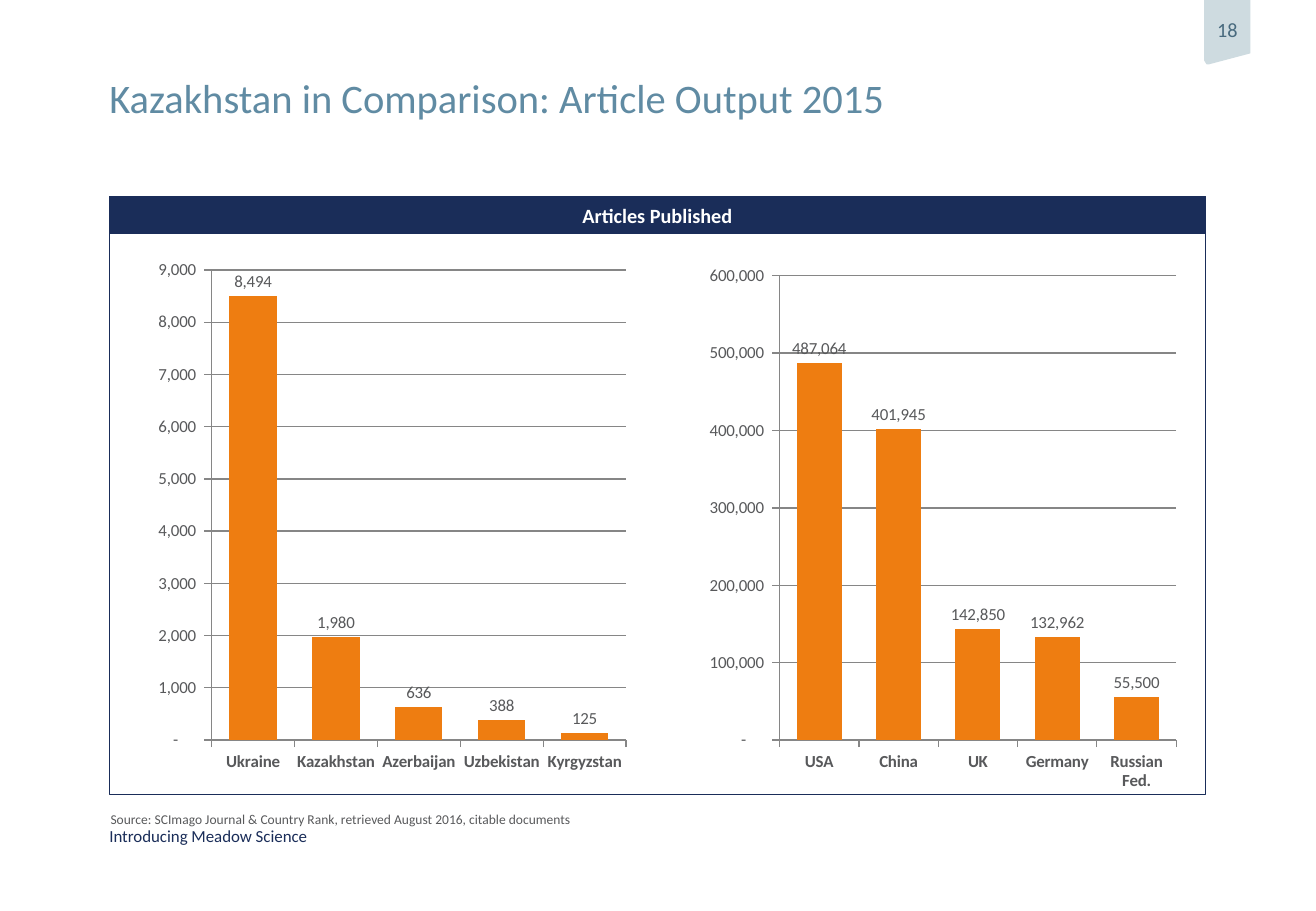
import pptx
import pptx.util
import pptx.chart.data
import pptx.dml.color
import pptx.enum.chart
import pptx.enum.shapes
import pptx.enum.text
import pptx.oxml
from pptx.util import Inches

FONT = "Calibri"
NAVY, TEAL, SLATE = "1A2D59", "608BA3", "486A7E"
PALE, ORANGE, GREY, WHITE = "CEDBE0", "EE7D11", "58595B", "FFFFFF"
AXIS_GREY = "868686"
ACCOUNTING = '_(* #,##0_);_(* \\(#,##0\\);_(* "-"??_);_('
ALIGN = pptx.enum.text.PP_ALIGN
ANCHOR = pptx.enum.text.MSO_ANCHOR


def rgb(value):
    return pptx.dml.color.RGBColor.from_string(value)


def style_font(font, size, color, bold=False):
    font.name = FONT
    font.size = pptx.util.Pt(size)
    font.bold = bold
    font.color.rgb = rgb(color)


def write(frame, text, size, color, bold=False, align=ALIGN.LEFT,
          anchor=ANCHOR.TOP, wrap=True, bottom=0):
    """Fill a text frame with one formatted line."""
    frame.margin_left = frame.margin_right = frame.margin_top = 0
    frame.margin_bottom = Inches(bottom)
    frame.word_wrap = wrap
    frame.auto_size = pptx.enum.text.MSO_AUTO_SIZE.NONE
    frame.vertical_anchor = anchor
    para = frame.paragraphs[0]
    para.alignment = align
    span = para.add_run()
    span.text = text
    style_font(span.font, size, color, bold)


def add_text(page, left, top, width, height, text, size, color, **options):
    box = page.shapes.add_textbox(Inches(left), Inches(top), Inches(width), Inches(height))
    write(box.text_frame, text, size, color, **options)


def add_panel(page, left, top, width, height, fill=None):
    panel = page.shapes.add_shape(
        pptx.enum.shapes.MSO_SHAPE.RECTANGLE,
        Inches(left), Inches(top), Inches(width), Inches(height))
    panel.shadow.inherit = False
    if fill:
        panel.fill.solid()
        panel.fill.fore_color.rgb = rgb(fill)
    else:
        panel.fill.background()
    panel.line.color.rgb = rgb(NAVY)
    panel.line.width = pptx.util.Pt(1)
    return panel


def add_page_tab(page, number):
    points = [(9.91, 0), (10.29, 0), (10.29, 0.44), (9.95, 0.53), (9.93, 0.53), (9.91, 0.5)]
    corners = [(Inches(x), Inches(y)) for x, y in points]
    builder = page.shapes.build_freeform(*corners[0])
    builder.add_line_segments(corners[1:], close=True)
    tab = builder.convert_to_shape()
    tab.shadow.inherit = False
    tab.fill.solid()
    tab.fill.fore_color.rgb = rgb(PALE)
    tab.line.fill.background()
    write(tab.text_frame, number, 12, SLATE, align=ALIGN.CENTER,
          anchor=ANCHOR.MIDDLE, wrap=False, bottom=0.04)


def place_plot(chart, x, y, w, h):
    """Fix the inner plot area, in fractions of the chart."""
    edges = "".join(f'<c:{name} val="{value}"/>' for name, value in (
        ("xMode", "edge"), ("yMode", "edge"), ("x", x), ("y", y), ("w", w), ("h", h)))
    layout = pptx.oxml.parse_xml(
        '<c:layout xmlns:c="http://schemas.openxmlformats.org/drawingml/2006/chart">'
        f'<c:manualLayout><c:layoutTarget val="inner"/>{edges}</c:manualLayout></c:layout>')
    area = chart.plots[0]._element.getparent()
    for old in area.xpath("./c:layout"):
        area.remove(old)
    area.insert(0, layout)


def style_line(line):
    line.color.rgb = rgb(AXIS_GREY)
    line.width = pptx.util.Pt(0.75)


def add_column_chart(page, left, width, articles, maximum, step, plot_top, plot_height):
    data = pptx.chart.data.CategoryChartData(number_format="#,##0")
    data.categories = list(articles)
    data.add_series("Articles", list(articles.values()))
    chart = page.shapes.add_chart(
        pptx.enum.chart.XL_CHART_TYPE.COLUMN_CLUSTERED,
        Inches(left), Inches(1.94), Inches(width), Inches(4.72), data).chart
    style_font(chart.font, 10, GREY)
    chart.has_title = False
    chart.has_legend = False
    place_plot(chart, 0.19, plot_top, 0.77, plot_height)

    for axis, bold in ((chart.category_axis, True), (chart.value_axis, False)):
        style_font(axis.tick_labels.font, 10, GREY, bold)
        style_line(axis.format.line)
        axis.major_tick_mark = pptx.enum.chart.XL_TICK_MARK.OUTSIDE
    scale = chart.value_axis
    scale.minimum_scale, scale.maximum_scale, scale.major_unit = 0, maximum, step
    scale.tick_labels.number_format = ACCOUNTING
    scale.tick_labels.number_format_is_linked = False
    style_line(scale.major_gridlines.format.line)

    plot = chart.plots[0]
    plot.gap_width = 75
    plot.vary_by_categories = False
    fill = plot.series[0].format.fill
    fill.solid()
    fill.fore_color.rgb = rgb(ORANGE)
    plot.has_data_labels = True
    labels = plot.data_labels
    labels.show_value = True
    labels.number_format = ACCOUNTING
    labels.number_format_is_linked = False
    labels.position = pptx.enum.chart.XL_LABEL_POSITION.OUTSIDE_END
    style_font(labels.font, 10, GREY)


def main():
    deck = pptx.Presentation()
    deck.slide_width, deck.slide_height = Inches(10.83), Inches(7.5)
    page = deck.slides.add_slide(deck.slide_layouts[5])

    title = page.shapes.title
    title.left, title.top = Inches(0.9), Inches(0.6)
    title.width, title.height = Inches(9.39), Inches(0.33)
    write(title.text_frame, "Kazakhstan in Comparison: Article Output 2015", 24, TEAL)

    add_page_tab(page, "18")
    header = add_panel(page, 0.9, 1.62, 9.02, 0.3, NAVY)
    write(header.text_frame, "Articles Published", 12, WHITE, bold=True,
          align=ALIGN.CENTER, anchor=ANCHOR.MIDDLE)
    add_panel(page, 0.9, 1.62, 9.02, 4.92)

    region = {"Ukraine": 8494, "Kazakhstan": 1980, "Azerbaijan": 636,
              "Uzbekistan": 388, "Kyrgyzstan": 125}
    leaders = {"USA": 487064, "China": 401945, "UK": 142850,
               "Germany": 132962, "Russian Fed.": 55500}
    add_column_chart(page, 0.9, 4.43, region, 9000, 1000, 0.06, 0.82)
    add_column_chart(page, 5.61, 4.24, leaders, 600000, 100000, 0.07, 0.81)

    add_text(page, 0.91, 6.68, 3.87, 0.13,
             "Source: SCImago Journal & Country Rank, retrieved August 2016, citable documents",
             8, GREY, wrap=False)
    add_text(page, 0.9, 6.8, 3.84, 0.17, "Introducing Meadow Science", 10, NAVY,
             anchor=ANCHOR.MIDDLE)
    deck.save("out.pptx")


if __name__ == "__main__":
    main()
